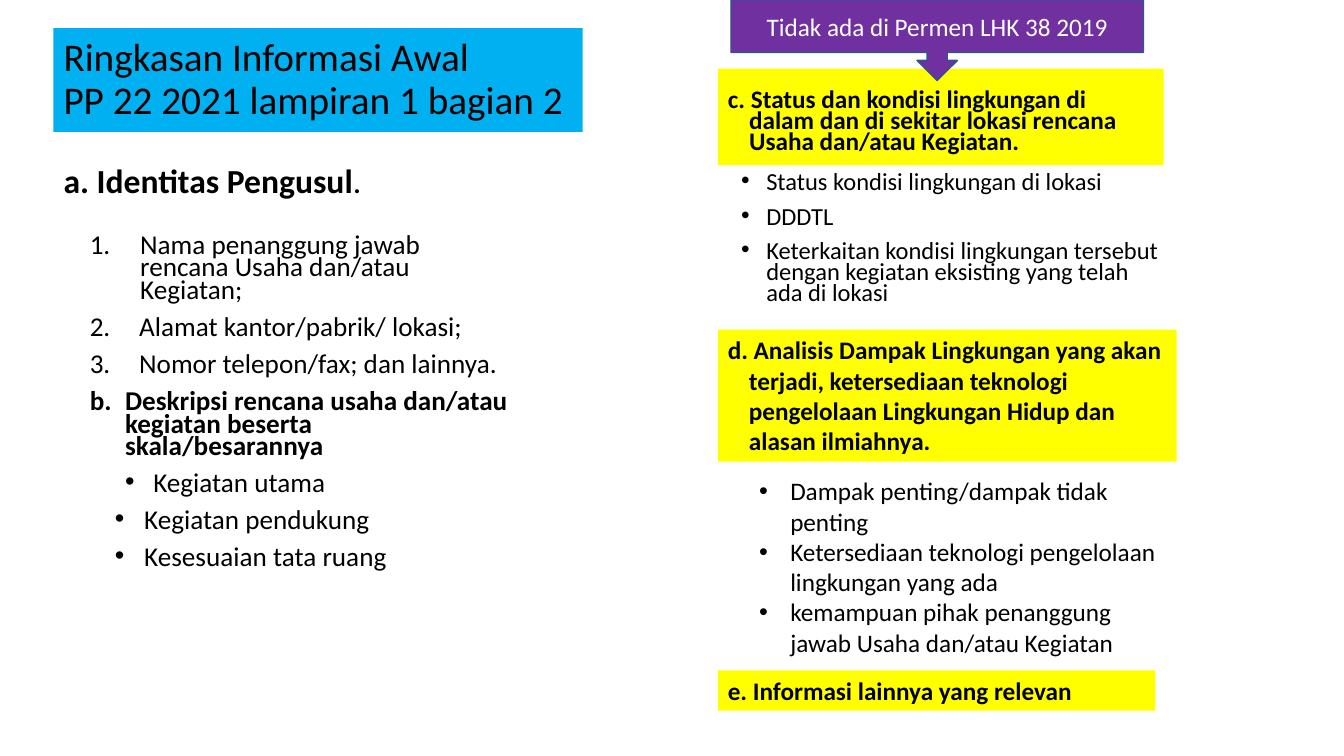
from dataclasses import dataclass

from lxml.etree import SubElement
from pptx import Presentation
from pptx.dml.color import RGBColor as RGB
from pptx.enum.shapes import MSO_SHAPE as Shape
from pptx.enum.text import MSO_ANCHOR as Anchor, MSO_AUTO_SIZE as Auto, PP_ALIGN as Align
from pptx.oxml.ns import qn
from pptx.util import Inches, Pt


@dataclass(frozen=True)
class Theme:
    font: str = "Calibri"
    ink: RGB = RGB(0, 0, 0)
    white: RGB = RGB(255, 255, 255)
    blue: RGB = RGB(0x00, 0xB0, 0xF0)
    yellow: RGB = RGB(0xFF, 0xFF, 0x00)
    purple: RGB = RGB(0x70, 0x30, 0xA0)
    edge: RGB = RGB(0x32, 0x54, 0x91)
    title: float = 28
    head: float = 24
    list: float = 19.4
    base: float = 18
    small: float = 17.5


@dataclass(frozen=True)
class Item:
    text: str
    left: float = 0
    hang: float = 0
    mark: str = ""
    bold: bool = False


THEME = Theme()


def place(shape, box, fill=None):
    shape.left, shape.top, shape.width, shape.height = map(Inches, box)
    if fill is not None:
        shape.fill.solid()
        shape.fill.fore_color.rgb = fill


def set_mark(props, mark):
    if mark == "1.":
        SubElement(props, qn("a:buAutoNum"), type="arabicPeriod")
    elif mark:
        SubElement(props, qn("a:buFont"), typeface="Arial")
        SubElement(props, qn("a:buChar"), char=mark)
    else:
        SubElement(props, qn("a:buNone"))


def write(shape, items, size, color=THEME.ink, lead=1.0, gap=0,
          anchor=Anchor.TOP, align=Align.LEFT):
    frame = shape.text_frame
    frame.word_wrap = True
    frame.auto_size = Auto.NONE
    frame.vertical_anchor = anchor
    for index, item in enumerate(items):
        para = frame.add_paragraph() if index else frame.paragraphs[0]
        para.text = item.text
        props = para._p.get_or_add_pPr()
        props.set("marL", str(Inches(item.left)))
        props.set("indent", str(Inches(-item.hang)))
        set_mark(props, item.mark)
        para.alignment = align
        para.line_spacing = lead
        para.space_before = Pt(gap)
        font = para.font
        font.name, font.size, font.bold = THEME.font, Pt(size), item.bold
        font.color.rgb = color
    return frame


def add_title(title, box):
    place(title, box, THEME.blue)
    write(title, [Item("Ringkasan Informasi Awal\vPP 22 2021 lampiran 1 bagian 2")],
          THEME.title, lead=0.9, anchor=Anchor.MIDDLE)


def add_left(head, body, box):
    x, y, w, h = box
    # Heading a, with a plain full stop
    place(head, (x, y, w, 0.4))
    frame = write(head, [Item("a. Identitas Pengusul", bold=True)], THEME.head,
                  lead=0.9, gap=10, anchor=Anchor.BOTTOM)
    para = frame.paragraphs[0]
    para.runs[0].font.bold = True
    stop = para.add_run()
    stop.text = "."
    stop.font.bold = False

    # Numbered list, heading b and its bullets
    place(body, (x + 0.26, y + 0.65, w, h - 0.65))
    write(body, [
        Item("Nama penanggung jawab rencana Usaha dan/atau Kegiatan;", 0.5, 0.5, "1."),
        Item("Alamat kantor/pabrik/ lokasi;", 0.49, 0.49, "1."),
        Item("Nomor telepon/fax; dan lainnya.", 0.49, 0.49, "1."),
        Item("b.\tDeskripsi rencana usaha dan/atau kegiatan beserta skala/besarannya",
             0.35, 0.35, bold=True),
        Item("Kegiatan utama", 0.63, 0.28, "•"),
        Item("Kegiatan pendukung", 0.54, 0.29, "•"),
        Item("Kesesuaian tata ruang", 0.54, 0.29, "•"),
    ], THEME.list, lead=0.7, gap=10)


def add_right(slide, head, body, box):
    x, y, w, h = box
    # Heading c and its bullets
    place(head, (x, y, 4.42, 0.96), THEME.yellow)
    frame = write(head, [Item(
        "c. Status dan kondisi lingkungan di dalam dan di sekitar lokasi rencana "
        "Usaha dan/atau Kegiatan.", 0.21, 0.21, bold=True)],
        THEME.base, lead=0.7, gap=10, anchor=Anchor.BOTTOM)
    frame.margin_bottom = Inches(0.1)
    place(body, (x + 0.13, y + 1, 4.42, 1.54))
    write(body, [Item(text, 0.25, 0.25, "•") for text in (
        "Status kondisi lingkungan di lokasi",
        "DDDTL",
        "Keterkaitan kondisi lingkungan tersebut dengan kegiatan eksisting "
        "yang telah ada di lokasi",
    )], THEME.small, lead=0.7, gap=10)

    # Heading d, its bullets and heading e
    impact = [Item(
        "d. Analisis Dampak Lingkungan yang akan terjadi, ketersediaan teknologi "
        "pengelolaan Lingkungan Hidup dan alasan ilmiahnya.", 0.21, 0.21, bold=True)]
    points = [Item(text, 0.31, 0.31, "•") for text in (
        "Dampak penting/dampak tidak penting",
        "Ketersediaan teknologi pengelolaan lingkungan yang ada",
        "kemampuan pihak penanggung jawab Usaha dan/atau Kegiatan",
    )]
    other = [Item("e. Informasi lainnya yang relevan", bold=True)]
    for items, area, fill in (
        (impact, (x, y + 2.59, w, 1.31), THEME.yellow),
        (points, (x + 0.31, y + 3.99, w - 0.31, 1.92), None),
        (other, (x, y + h - 0.4, 4.34, 0.4), THEME.yellow),
    ):
        text = slide.shapes.add_textbox(0, 0, 0, 0)
        place(text, area, fill)
        write(text, items, THEME.base)


def add_note(slide, box):
    note = slide.shapes.add_shape(Shape.DOWN_ARROW_CALLOUT, 0, 0, 0, 0)
    place(note, box, THEME.purple)
    note.shadow.inherit = False
    note.line.color.rgb = THEME.edge
    note.line.width = Pt(1)
    write(note, [Item("Tidak ada di Permen LHK 38 2019")], THEME.base, THEME.white,
          anchor=Anchor.MIDDLE, align=Align.CENTER)


def main():
    deck = Presentation()
    deck.slide_width, deck.slide_height = Inches(13.33), Inches(7.5)
    slide = deck.slides.add_slide(deck.slide_layouts[4])
    title, head_a, list_a, head_c, list_c = slide.placeholders
    add_title(title, (0.53, 0.28, 5.25, 1.03))
    add_left(head_a, list_a, (0.53, 1.64, 4.42, 5.57))
    add_right(slide, head_c, list_c, (7.12, 0.68, 4.55, 6.37))
    add_note(slide, (7.25, 0, 4.09, 0.8))
    deck.save("out.pptx")


if __name__ == "__main__":
    main()
